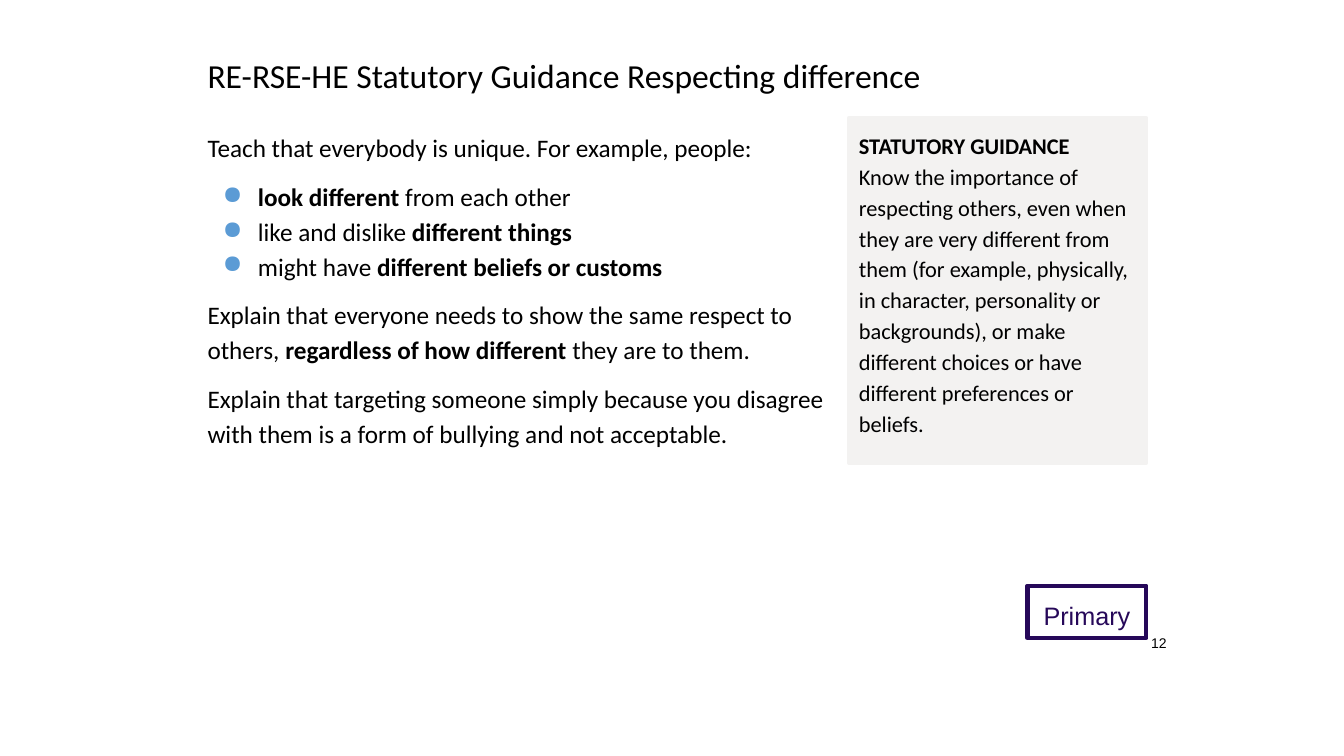
from dataclasses import dataclass

from lxml.etree import SubElement
from pptx import Presentation
from pptx.dml.color import RGBColor
from pptx.enum.shapes import MSO_SHAPE
from pptx.enum.text import MSO_ANCHOR, PP_ALIGN
from pptx.oxml.ns import qn
from pptx.util import Emu, Pt

PX = 9144  # EMU per px, 100 px to the inch


@dataclass(frozen=True)
class Theme:
    ink: str = "000000"
    purple: str = "260859"
    panel: str = "F3F2F1"
    bullet: str = "5B9BD5"
    sans: str = "Calibri"
    label_font: str = "Arial"
    title: int = 24
    body: int = 18
    guidance: int = 16
    number: int = 10
    border: int = 3
    line_spacing: float = 1.15
    gap: int = 10
    margin: int = 10
    indent: int = 50
    hanging: int = 35


class SlideBuilder:
    def __init__(self, deck, theme):
        self.theme = theme
        self.slide = deck.slides.add_slide(deck.slide_layouts[6])

    def text(self, left, top, width, height):
        """Add a text box and return it."""
        box = self.slide.shapes.add_textbox(*(Emu(n * PX) for n in (left, top, width, height)))
        return self.prepare(box)

    def panel(self, left, top, width, height, line, fill=None):
        """Add a bordered rectangle, filled when a fill is given."""
        box = self.slide.shapes.add_shape(
            MSO_SHAPE.RECTANGLE, *(Emu(n * PX) for n in (left, top, width, height)))
        box.shadow.inherit = False
        if fill:
            box.fill.solid()
            box.fill.fore_color.rgb = RGBColor.from_string(fill)
        else:
            box.fill.background()
        box.line.color.rgb = RGBColor.from_string(line)
        box.line.width = Pt(self.theme.border)
        SubElement(box.element.spPr.find(qn("a:ln")), qn("a:round"))
        return self.prepare(box)

    def prepare(self, box):
        frame = box.text_frame
        frame.word_wrap = True
        frame.vertical_anchor = MSO_ANCHOR.TOP
        margin = Emu(self.theme.margin * PX)
        frame.margin_left = frame.margin_right = margin
        frame.margin_top = frame.margin_bottom = margin
        return box

    def paragraph(self, box, spans, size, font=None, color=None, align=PP_ALIGN.LEFT,
                  spacing=None, before=0, bulleted=False):
        """Append a paragraph; spans are (text, bold) pairs."""
        frame = box.text_frame
        para = frame.add_paragraph() if frame.text else frame.paragraphs[0]
        if bulleted:
            self.add_bullet(para)
        para.alignment = align
        para.space_before = Pt(before)
        para.line_spacing = spacing
        for words, bold in spans:
            span = para.add_run()
            span.text = words
            span.font.bold = bold
            span.font.size = Pt(size)
            span.font.name = font or self.theme.sans
            span.font.color.rgb = RGBColor.from_string(color or self.theme.ink)

    def add_bullet(self, para):
        properties = para._p.get_or_add_pPr()
        properties.set("marL", str(self.theme.indent * PX))
        properties.set("indent", str(-self.theme.hanging * PX))
        tint = SubElement(properties, qn("a:buClr"))
        SubElement(tint, qn("a:srgbClr"), val=self.theme.bullet)
        SubElement(properties, qn("a:buChar"), char="●")


def main():
    theme = Theme()
    deck = Presentation()
    deck.slide_width, deck.slide_height = Emu(1333 * PX), Emu(750 * PX)
    page = SlideBuilder(deck, theme)

    # Title
    title = page.text(196, 44, 872, 63)
    page.paragraph(title, [("RE-RSE-HE Statutory Guidance Respecting difference", False)],
                   theme.title)

    # Phase label
    phase = page.panel(1019, 581, 118, 52, theme.purple)
    page.paragraph(phase, [("Primary", False)], theme.body, theme.label_font, theme.purple,
                   PP_ALIGN.CENTER, theme.line_spacing)

    # Teaching points: spans, space before, bulleted
    points = [
        ([("Teach that everybody is unique. For example, people:", False)], 0, False),
        ([("look different ", True), ("from each other", False)], theme.gap, True),
        ([("like and dislike", False), (" different things", True)], 0, True),
        ([("might have ", False), ("different beliefs or customs", True)], 0, True),
        ([("Explain that everyone needs to show the same respect to others, ", False),
          ("regardless of how different", True), (" they are to them.", False)], theme.gap, False),
        ([("Explain that targeting someone simply because you disagree with them is a form of "
           "bullying and not acceptable.", False)], theme.gap, False),
    ]
    teaching = page.text(196, 117, 641, 401)
    for spans, before, bulleted in points:
        page.paragraph(teaching, spans, theme.body, spacing=theme.line_spacing,
                       before=before, bulleted=bulleted)

    # Statutory guidance panel
    guidance = page.panel(842, 117, 295, 342, theme.panel, theme.panel)
    for words, bold in [
        ("STATUTORY GUIDANCE", True),
        ("Know the importance of respecting others, even when they are very different from them "
         "(for example, physically, in character, personality or backgrounds), or make different "
         "choices or have different preferences or beliefs.", False),
    ]:
        page.paragraph(guidance, [(words, bold)], theme.guidance, spacing=theme.line_spacing)

    # Page number
    number = page.text(1128, 619, 39, 37)
    number.text_frame.vertical_anchor = MSO_ANCHOR.MIDDLE
    page.paragraph(number, [("12", False)], theme.number, theme.label_font,
                   align=PP_ALIGN.RIGHT)

    deck.save("out.pptx")


if __name__ == "__main__":
    main()
